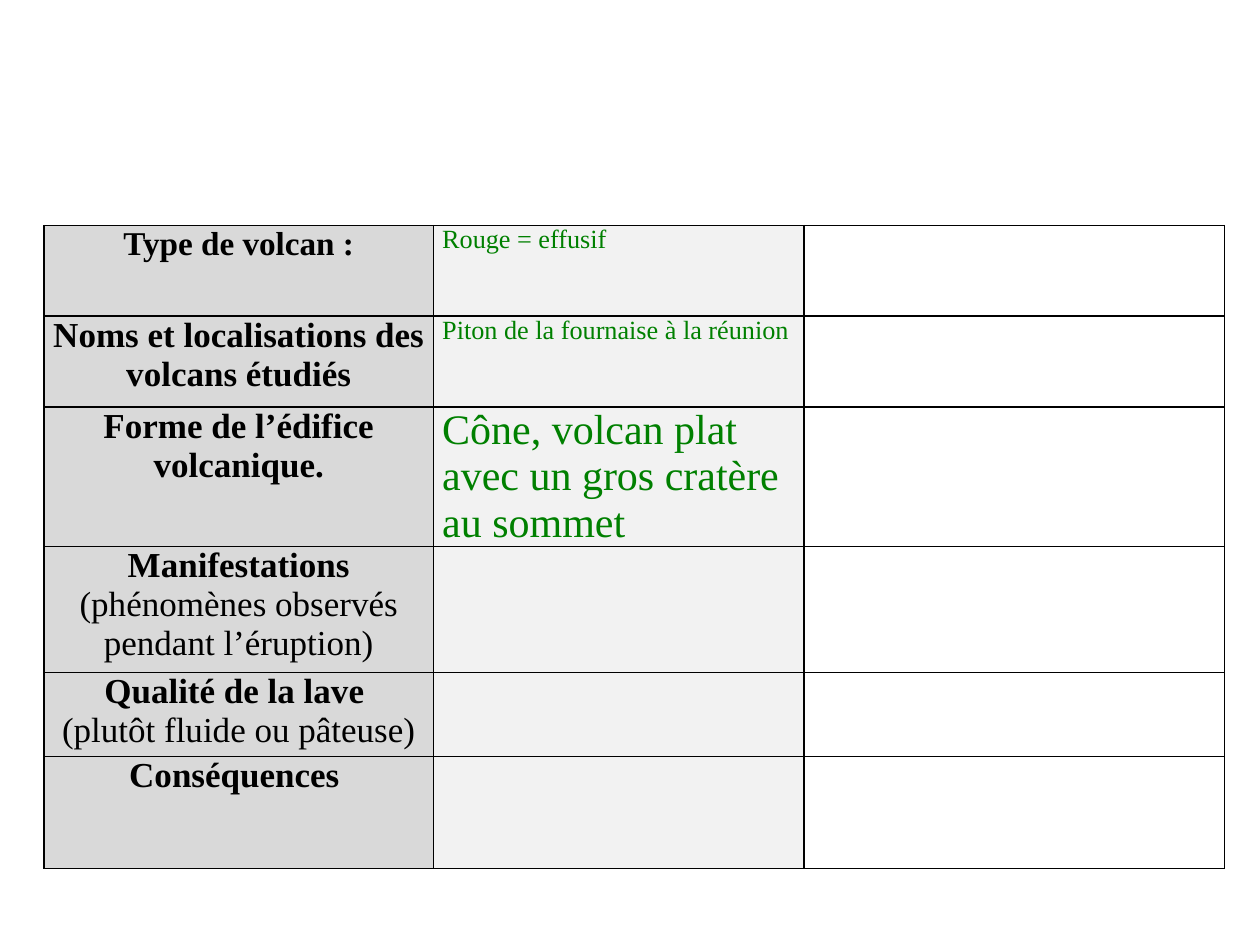
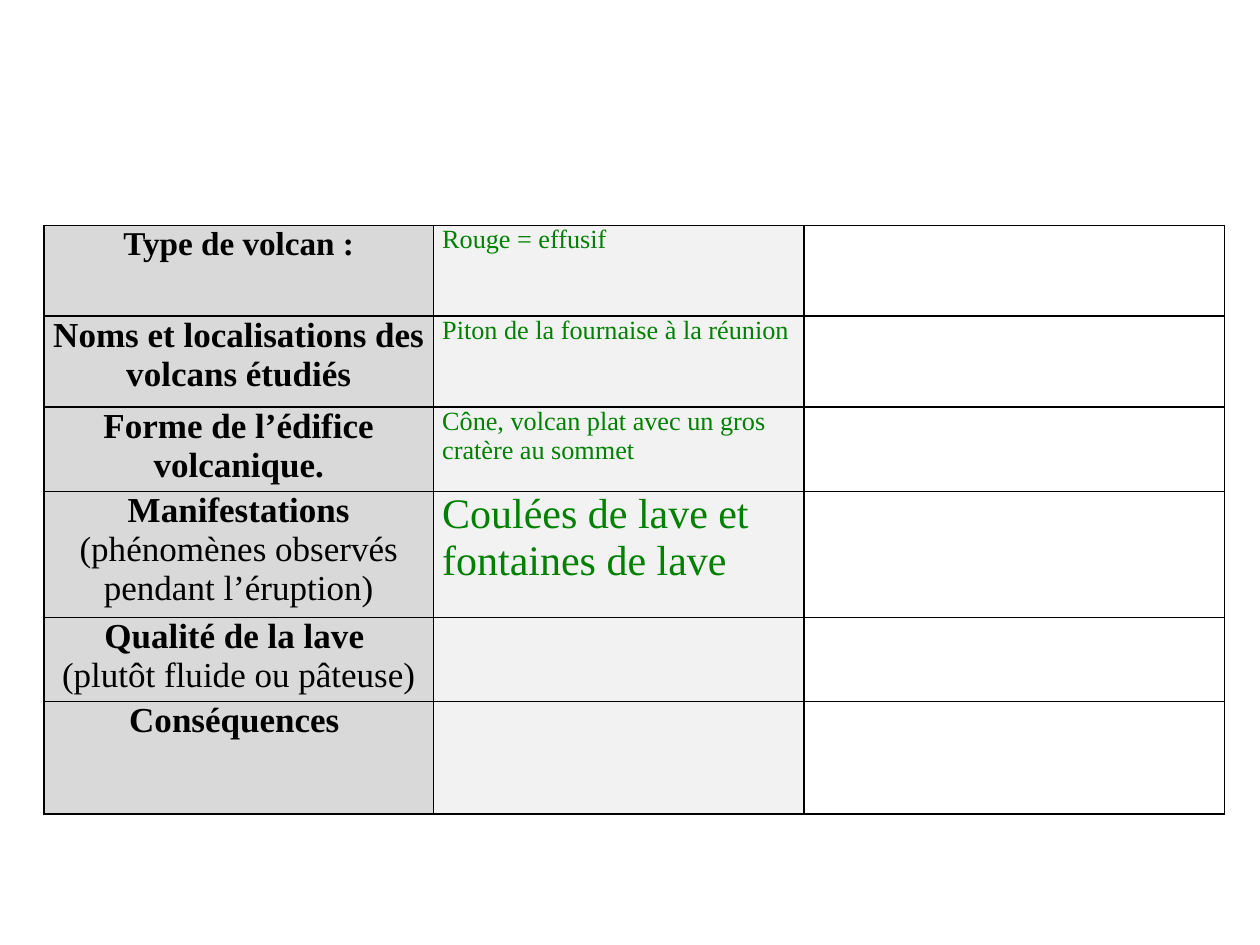
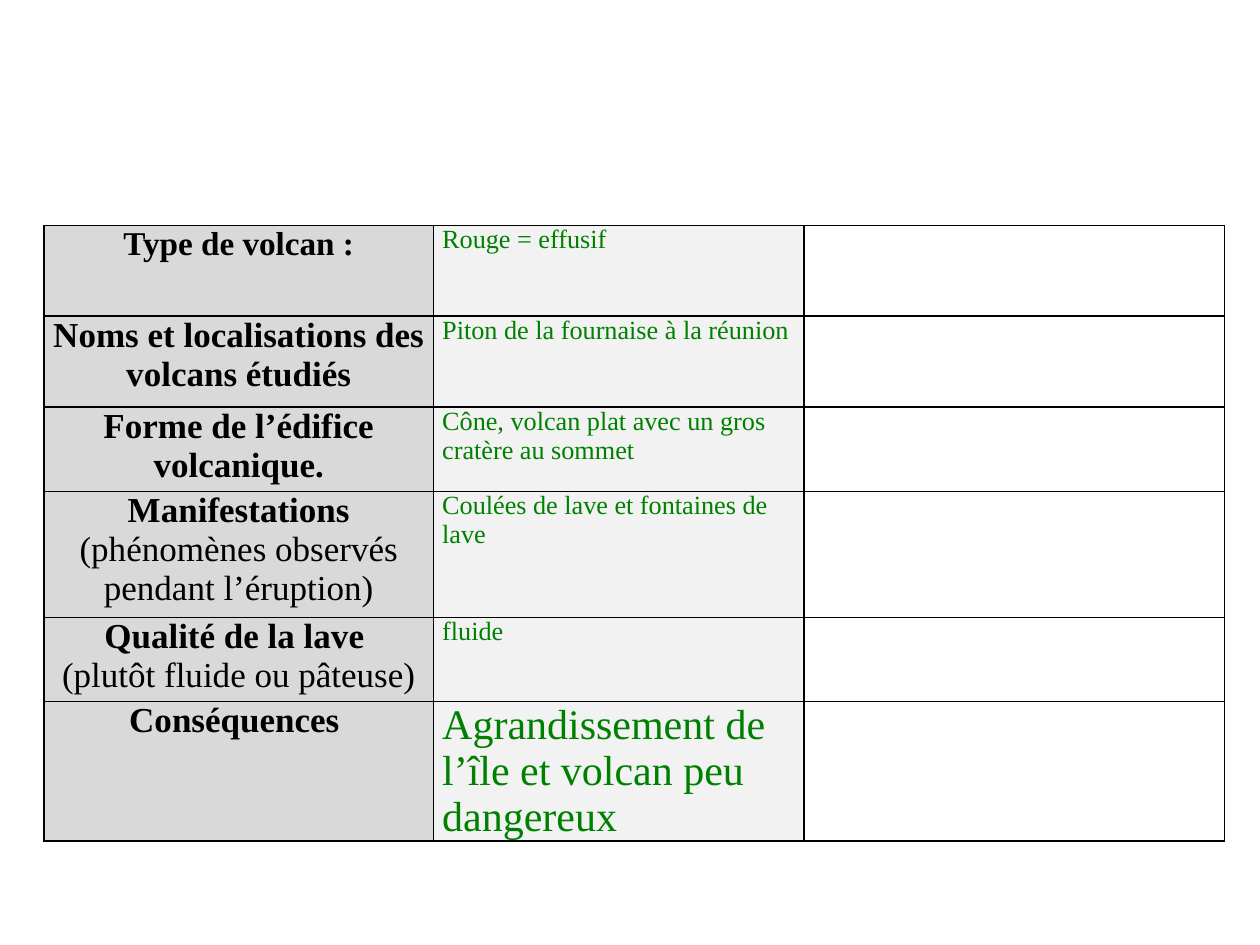
from dataclasses import dataclass

from lxml.etree import SubElement
from pptx import Presentation
from pptx.dml.color import RGBColor as Color
from pptx.enum.text import PP_ALIGN as Align
from pptx.oxml.ns import qn
from pptx.util import Inches, Pt

# Content: each row has a heading (paragraphs of (text, bold) runs), its answer and its height
ROWS = [
    ([[("Type de volcan :", True)]], "Rouge = effusif", 0.72),
    ([[("Noms et localisations des volcans étudiés", True)]],
     "Piton de la fournaise à la réunion", 0.72),
    ([[("Forme de l’édifice volcanique.", True)]],
     "Cône, volcan plat avec un gros cratère au sommet", 0.67),
    ([[("Manifestations ", True), ("(phénomènes observés pendant l’éruption)", False)]],
     "Coulées de lave et fontaines de lave", 1.0),
    ([[("Qualité de la lave ", True)], [("(plutôt fluide ou pâteuse)", False)]],
     "fluide", 0.67),
    ([[("Conséquences ", True)]],
     "Agrandissement de l’île et volcan peu dangereux", 0.89),
]
ANSWERS_SHOWN = [3, 4, 6]  # per slide; the last one shown is the new one
COLUMN_WIDTHS = [3.09, 2.94, 3.34]
TABLE_LEFT, TABLE_TOP = 0.35, 1.79


@dataclass(frozen=True)
class Theme:
    font: str = "Times New Roman"
    ink: str = "000000"
    answer: str = "008000"
    heading_fill: str = "D9D9D9"
    answer_fill: str = "F2F2F2"
    first_heading_size: int = 19
    heading_size: int = 20
    answer_size: int = 15
    new_answer_size: int = 24
    border: float = 1
    side_margin: float = 0.07


THEME = Theme()


def add_borders(cell):
    properties = cell._tc.get_or_add_tcPr()
    for position, side in enumerate(("lnL", "lnR", "lnT", "lnB")):
        line = SubElement(properties, qn(f"a:{side}"), w=str(Pt(THEME.border)))
        fill = SubElement(line, qn("a:solidFill"))
        SubElement(fill, qn("a:srgbClr"), val=THEME.ink)
        properties.insert(position, line)  # borders come before the fill


def style_cell(cell, fill=None):
    cell.margin_left = cell.margin_right = Inches(THEME.side_margin)
    cell.margin_top = cell.margin_bottom = 0
    if fill:
        cell.fill.solid()
        cell.fill.fore_color.rgb = Color.from_string(fill)
    else:
        cell.fill.background()
    add_borders(cell)


def write(cell, paragraphs, size, color, align):
    frame = cell.text_frame
    for index, runs in enumerate(paragraphs):
        para = frame.add_paragraph() if index else frame.paragraphs[0]
        para.alignment = align
        for text, bold in runs:
            span = para.add_run()
            span.text = text
            span.font.name = THEME.font
            span.font.size = Pt(size)
            span.font.bold = bold
            span.font.color.rgb = Color.from_string(color)


def add_volcano_table(page, shown):
    heights = [height for _, _, height in ROWS]
    frame = page.shapes.add_table(
        len(ROWS), len(COLUMN_WIDTHS), Inches(TABLE_LEFT), Inches(TABLE_TOP),
        Inches(sum(COLUMN_WIDTHS)), Inches(sum(heights)))
    table = frame.table
    table.first_row = table.horz_banding = False
    for column, width in zip(table.columns, COLUMN_WIDTHS):
        column.width = Inches(width)

    for index, (heading, answer, height) in enumerate(ROWS):
        row = table.rows[index]
        row.height = Inches(height)
        heading_cell, answer_cell, blank_cell = row.cells
        style_cell(heading_cell, THEME.heading_fill)
        style_cell(answer_cell, THEME.answer_fill)
        style_cell(blank_cell)

        heading_size = THEME.heading_size if index else THEME.first_heading_size
        write(heading_cell, heading, heading_size, THEME.ink, Align.CENTER)
        if index < shown:
            is_new = index == shown - 1
            size = THEME.new_answer_size if is_new else THEME.answer_size
            write(answer_cell, [[(answer, False)]], size, THEME.answer, Align.LEFT)


def main():
    deck = Presentation()
    deck.slide_width, deck.slide_height = Inches(10), Inches(7.5)
    blank_layout = deck.slide_layouts[6]
    for shown in ANSWERS_SHOWN:
        add_volcano_table(deck.slides.add_slide(blank_layout), shown)
    deck.save("out.pptx")


if __name__ == "__main__":
    main()
